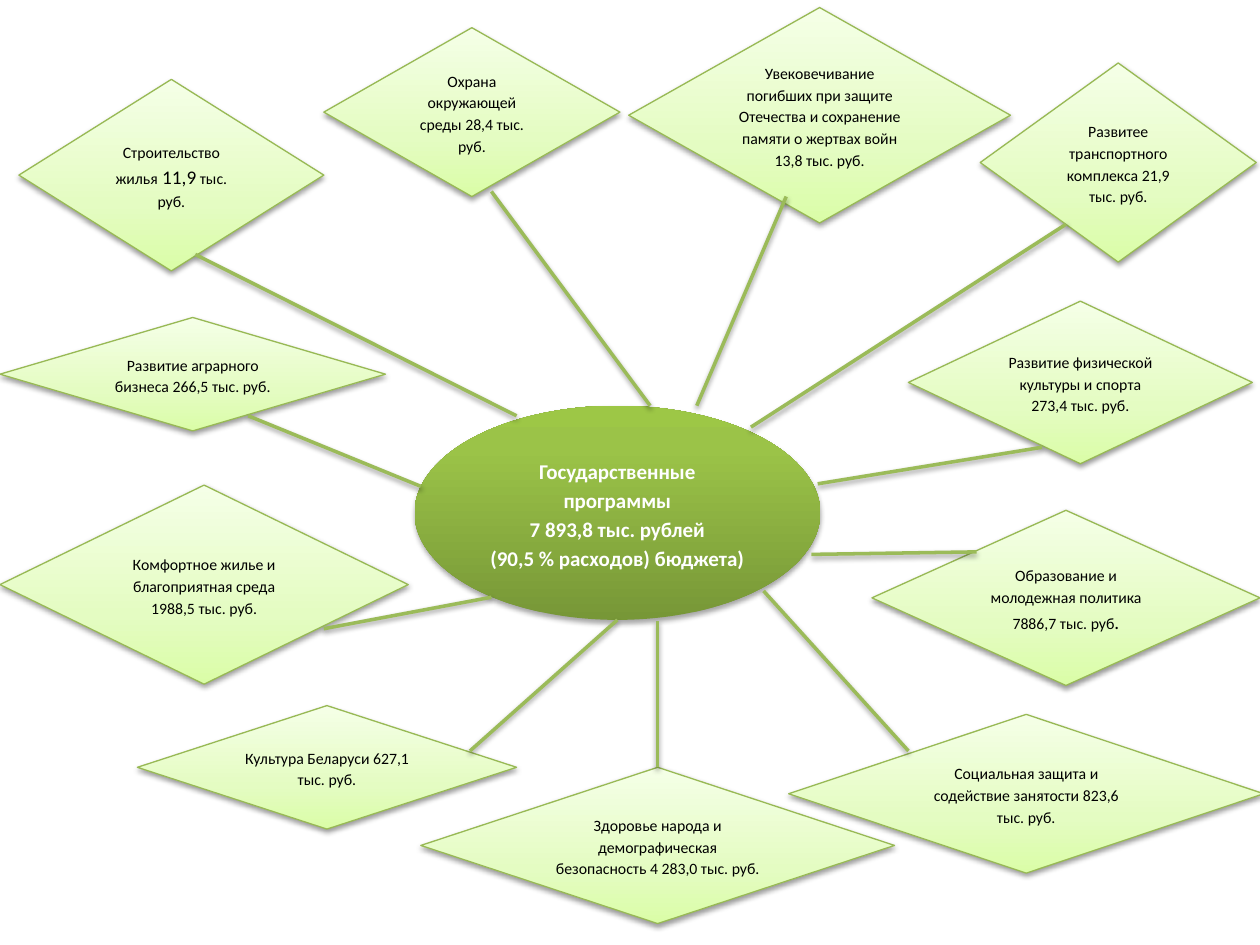
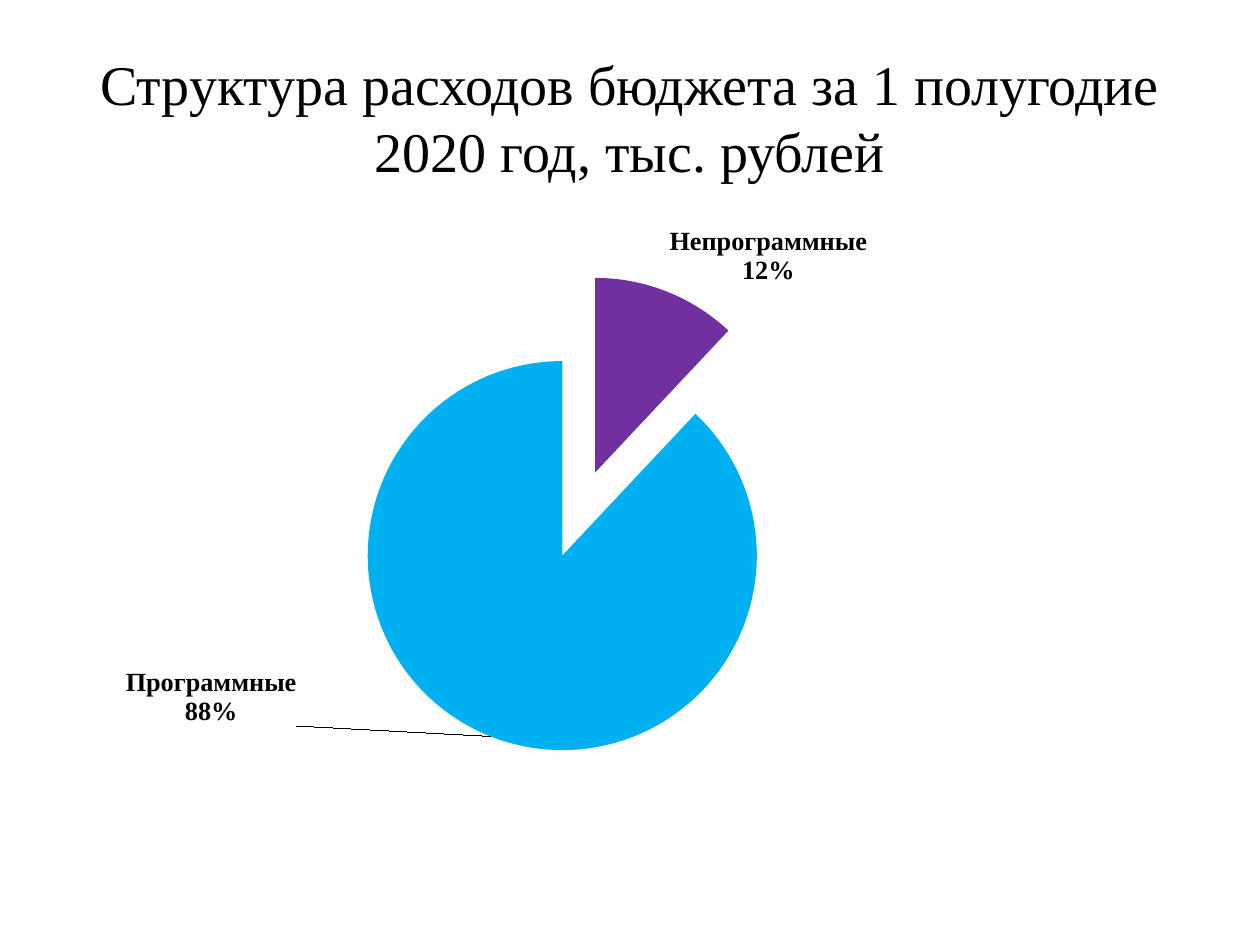
from copy import deepcopy

from pptx import Presentation
from pptx import oxml
from pptx import util as u
from pptx.chart import data as chart_data
from pptx.dml.color import RGBColor
from pptx.enum import chart as charts
from pptx.enum import shapes, text
from pptx.oxml import ns

BLACK = RGBColor(0x00, 0x00, 0x00)
WHITE = RGBColor(0xFF, 0xFF, 0xFF)
DIAMOND_EDGE = RGBColor(0x98, 0xB9, 0x55)
SPOKE_GREEN = RGBColor(0x9B, 0xBB, 0x59)
PURPLE = RGBColor(0x70, 0x30, 0xA0)
SKY_BLUE = RGBColor(0x00, 0xB0, 0xF0)

HUB_STOPS = [(0, RGBColor(0x77, 0x97, 0x37)),
             (80, RGBColor(0x9B, 0xC3, 0x48)),
             (100, RGBColor(0x9D, 0xC7, 0x46))]
DIAMOND_STOPS = [(0, RGBColor(0xDA, 0xFD, 0xA7)),
                 (35, RGBColor(0xE4, 0xFC, 0xC2)),
                 (100, RGBColor(0xF5, 0xFF, 0xE7))]

HUB_FONT = {"name": "Calibri", "size": u.Pt(12), "bold": True}
PROGRAM_FONT = {"name": "Calibri", "size": u.Pt(9)}
TITLE_FONT = {"name": "Times New Roman", "size": u.Pt(32)}
LABEL_FONT = {"name": "Times New Roman", "size": u.Pt(15), "bold": True}
CHART_FONT = {"name": "Calibri", "size": u.Pt(18)}

HUB_LINES = ["Государственные программы", "7 893,8 тыс. рублей",
             "(90,5 % расходов) бюджета)"]

HEALTH = "Здоровье народа и демографическая безопасность 4 283,0 тыс. руб."

PROGRAMS = [
    ((4.99, 0.06, 3.03, 1.71), 0,
     [("Увековечивание погибших при защите Отечества и сохранение "
       "памяти о жертвах войн 13,8 тыс. руб.", 9)]),
    ((2.57, 0.22, 2.35, 1.34), 10,
     [("Охрана окружающей среды 28,4 тыс. руб.", 9)]),
    ((0.15, 0.63, 2.42, 1.52), 0,
     [("Строительство жилья", 9), (" 11,9", 11), (" тыс.", 9), (" ", 11),
      ("руб.", 9)]),
    ((7.78, 0.5, 2.19, 1.58), 10,
     [("Развитее транспортного комплекса 21,9 тыс. руб.", 9)]),
    ((7.21, 2.39, 2.73, 1.29), 10,
     [("Развитие физической культуры и спорта 273,4 тыс. руб.", 9)]),
    ((6.92, 4.05, 3.08, 1.39), 10,
     [("Образование и молодежная политика 7886,7 тыс. руб", 9), (".", 11)]),
    ((6.26, 5.67, 3.77, 1.26), 10,
     [("Социальная защита и содействие занятости 823,6 тыс. руб.", 9)]),
    ((3.34, 6.09, 3.76, 1.24), 10, [(HEALTH, 9)]),
    ((1.09, 5.6, 3.01, 0.98), 10,
     [("Культура Беларуси 627,1 тыс. руб.", 9)]),
    ((0, 2.52, 3.06, 0.9), 10,
     [("Развитие аграрного бизнеса 266,5 тыс. руб.", 9)]),
    ((0, 3.85, 3.24, 1.58), 10,
     [("Комфортное жилье и благоприятная среда 1988,5 тыс. руб.", 9)]),
]

SPOKES = [
    (5.53, 3.22, 6.24, 1.56), (5.16, 3.22, 3.9, 1.52),
    (4.1, 3.3, 1.55, 2.02), (3.34, 3.86, 1.97, 3.3),
    (3.9, 4.74, 2.57, 4.99), (4.9, 4.92, 3.73, 5.96),
    (8.46, 1.78, 5.96, 3.39), (8.27, 3.55, 6.49, 3.84),
    (7.75, 4.38, 6.44, 4.4), (6.06, 4.69, 7.21, 5.96),
]
HEALTH_SPOKE = (5.22, 4.93, 5.22, 6.09)


def inches(values):
    return [u.Inches(value) for value in values]


def set_font(font, formats, color):
    for name, value in formats.items():
        setattr(font, name, value)
    font.color.rgb = color


def add_shadow(item, alpha, distance):
    properties = item._element.spPr
    effects = properties.find(ns.qn("a:effectLst"))
    if effects is None:
        effects = oxml.parse_xml(f'<a:effectLst {ns.nsdecls("a")}/>')
        properties.append(effects)
    effects.append(oxml.parse_xml(
        f'<a:outerShdw {ns.nsdecls("a")} blurRad="{u.Pt(3.1)}" '
        f'dist="{u.Pt(distance)}" dir="5400000" rotWithShape="0">'
        f'<a:srgbClr val="{BLACK}"><a:alpha val="{alpha * 1000}"/>'
        '</a:srgbClr></a:outerShdw>'))


def fill_gradient(shape, stops):
    shape.fill.gradient()
    shape.fill.gradient_angle = 90
    stop_list = shape._element.spPr.find(".//" + ns.qn("a:gsLst"))
    for stop in list(stop_list):
        stop_list.remove(stop)
    for place, color in stops:
        stop_list.append(oxml.parse_xml(
            f'<a:gs {ns.nsdecls("a")} pos="{place * 1000}">'
            f'<a:srgbClr val="{color}"/></a:gs>'))


def add_gradient_shape(page, kind, box, stops, alpha, distance):
    shape = page.shapes.add_shape(kind, *inches(box))
    fill_gradient(shape, stops)
    shape.shadow.inherit = False
    add_shadow(shape, alpha, distance)
    shape.text_frame.word_wrap = True
    shape.text_frame.vertical_anchor = text.MSO_ANCHOR.MIDDLE
    return shape


def style_paragraph(para, space_after=0):
    formats = {"alignment": text.PP_ALIGN.CENTER, "line_spacing": 1.15,
               "space_after": u.Pt(space_after)}
    for name, value in formats.items():
        setattr(para, name, value)


def add_hub(page):
    hub = add_gradient_shape(page, shapes.MSO_SHAPE.OVAL,
                             (3.29, 3.22, 3.22, 1.7), HUB_STOPS, 35, 1.8)
    hub.line.fill.background()
    frame = hub.text_frame
    frame.text = "\n".join(HUB_LINES)
    for para in frame.paragraphs:
        style_paragraph(para)
        set_font(para.runs[0].font, HUB_FONT, WHITE)


def add_program(page, box, space_after, spans):
    diamond = add_gradient_shape(page, shapes.MSO_SHAPE.FLOWCHART_DECISION,
                                 box, DIAMOND_STOPS, 38, 1.6)
    diamond.line.color.rgb = DIAMOND_EDGE
    diamond.line.width = u.Pt(0.75)
    para = diamond.text_frame.paragraphs[0]
    style_paragraph(para, space_after)
    for words, size in spans:
        span = para.add_run()
        span.text = words
        set_font(span.font, {**PROGRAM_FONT, "size": u.Pt(size)}, BLACK)
    return diamond


def add_spoke(page, ends, target=None):
    spoke = page.shapes.add_connector(shapes.MSO_CONNECTOR.STRAIGHT,
                                      *inches(ends))
    if target is not None:
        spoke.end_connect(target, 0)
    spoke.line.color.rgb = SPOKE_GREEN
    spoke.line.width = u.Pt(2)
    add_shadow(spoke, 38, 1.6)


def add_title(page, words):
    box = page.shapes.add_textbox(*inches((0.5, 0.3, 9, 1.25)))
    frame = box.text_frame
    frame.word_wrap = True
    frame.vertical_anchor = text.MSO_ANCHOR.MIDDLE
    para = frame.paragraphs[0]
    para.alignment = text.PP_ALIGN.CENTER
    span = para.add_run()
    span.text = words
    set_font(span.font, TITLE_FONT, BLACK)


def chart_layout(**settings):
    parts = "".join(f'<c:{name} val="{value}"/>'
                    for name, value in settings.items())
    return oxml.parse_xml(f'<c:layout {ns.nsdecls("c")}><c:manualLayout>'
                          f'{parts}</c:manualLayout></c:layout>')


def label_slices(series):
    labels = series.data_labels
    formats = {"show_value": False, "show_percentage": True,
               "show_category_name": True, "number_format": "0%",
               "number_format_is_linked": False,
               "position": charts.XL_LABEL_POSITION.OUTSIDE_END}
    for name, value in formats.items():
        setattr(labels, name, value)
    set_font(labels.font, LABEL_FONT, BLACK)

    group = series._element.find(ns.qn("c:dLbls"))
    separator = oxml.parse_xml(
        f'<c:separator {ns.nsdecls("c")}>\n</c:separator>')
    group.find(ns.qn("c:showBubbleSize")).addnext(separator)
    moved = oxml.parse_xml(
        f'<c:dLbl {ns.nsdecls("c")}><c:idx val="1"/></c:dLbl>')
    moved.append(chart_layout(x=-0.18, y=-0.12))
    for child in group:
        if child.tag != ns.qn("c:showLeaderLines"):
            moved.append(deepcopy(child))
    group.insert(0, moved)


def add_expense_pie(page):
    data = chart_data.CategoryChartData()
    data.categories = ["Непрограммные", "Программные"]
    data.add_series("Series 1", (12, 88))
    chart = page.shapes.add_chart(charts.XL_CHART_TYPE.PIE,
                                  *inches((0.5, 1.62, 8.44, 4.97)),
                                  data).chart
    chart.has_legend = False
    chart.has_title = False
    set_font(chart.font, CHART_FONT, BLACK)
    plot = chart.plots[0]
    plot.vary_by_categories = True
    series = plot.series[0]
    for index, color in enumerate((PURPLE, SKY_BLUE)):
        fill = series.points[index].format.fill
        fill.solid()
        fill.fore_color.rgb = color
    series._element.find(ns.qn("c:dPt")).addprevious(oxml.parse_xml(
        f'<c:explosion {ns.nsdecls("c")} val="23"/>'))
    label_slices(series)

    area = chart._chartSpace.find(".//" + ns.qn("c:plotArea"))
    for old in area.findall(ns.qn("c:layout")):
        area.remove(old)
    area.insert(0, chart_layout(layoutTarget="inner", xMode="edge",
                                yMode="edge", x=0.26, y=0.11, w=0.45, h=0.77))


def build_programs(page):
    add_hub(page)
    diamonds = {}
    for box, space_after, spans in PROGRAMS:
        diamonds[spans[0][0]] = add_program(page, box, space_after, spans)
    for ends in SPOKES:
        add_spoke(page, ends)
    add_spoke(page, HEALTH_SPOKE, diamonds[HEALTH])


def build_structure(page):
    add_title(page, "Структура расходов бюджета за 1 полугодие 2020 год, "
                    "тыс. рублей")
    add_expense_pie(page)


def main():
    deck = Presentation()
    deck.slide_width = u.Inches(10)
    deck.slide_height = u.Inches(7.5)
    for build in (build_programs, build_structure):
        build(deck.slides.add_slide(deck.slide_layouts[6]))
    deck.save("out.pptx")


if __name__ == "__main__":
    main()
